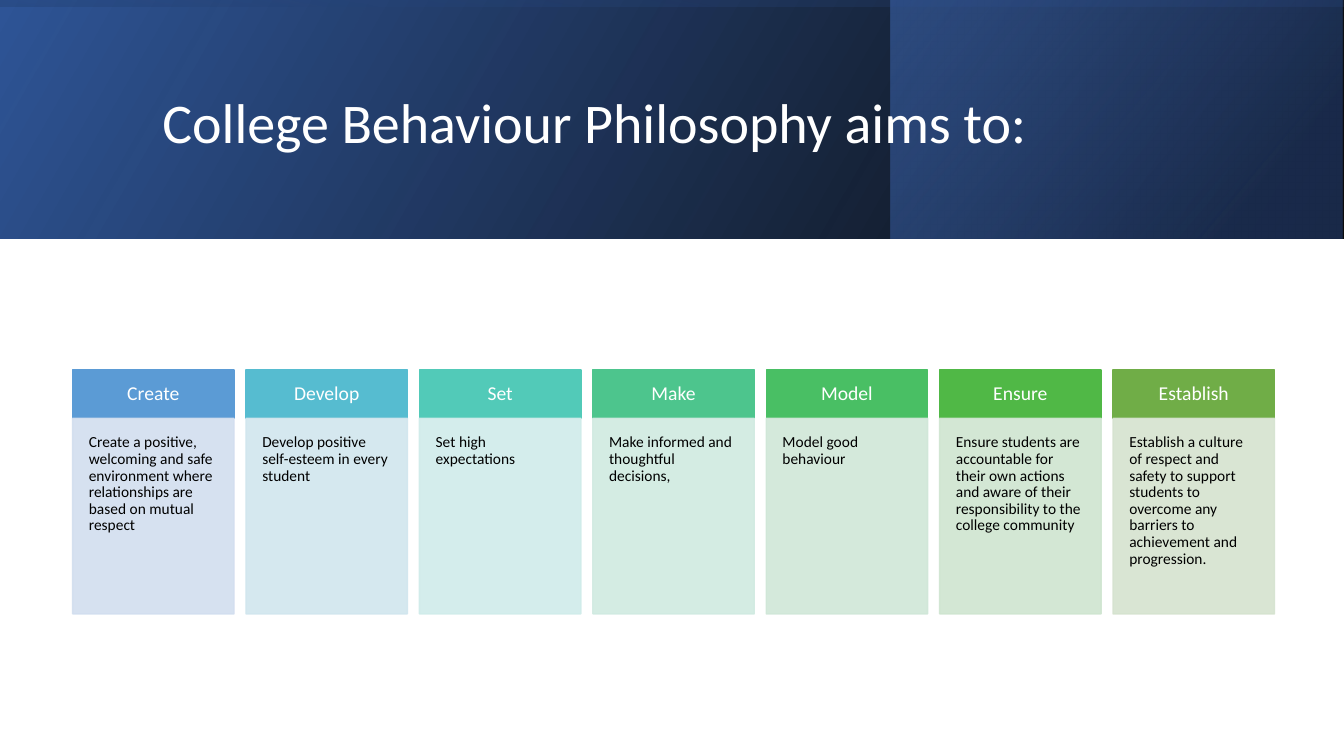
from lxml import etree
from pptx import Presentation
from pptx import util as u
from pptx.dml.color import RGBColor
from pptx.enum import shapes, text
from pptx.oxml import ns

WHITE = RGBColor(0xFF, 0xFF, 0xFF)
BLACK = RGBColor(0x00, 0x00, 0x00)
DEEP_BLUE = RGBColor(0x2F, 0x55, 0x97)
NAVY = RGBColor(0x20, 0x38, 0x64)
BLUE = RGBColor(0x44, 0x72, 0xC4)

PAGE_WIDTH, PAGE_HEIGHT, BAND_HEIGHT = 33.87, 19.05, 6.02

# Heading, text, heading colour, panel colour
AIMS = [
    ("Create", "Create a positive, welcoming and safe environment where "
     "relationships are based on mutual respect ",
     RGBColor(0x5B, 0x9B, 0xD5), RGBColor(0xD2, 0xDE, 0xEF)),
    ("Develop", "Develop positive self-esteem in every student",
     RGBColor(0x56, 0xBC, 0xD0), RGBColor(0xD1, 0xE6, 0xEE)),
    ("Set", "Set high expectations",
     RGBColor(0x52, 0xCA, 0xB8), RGBColor(0xD0, 0xEC, 0xEA)),
    ("Make", "Make informed and thoughtful decisions, ",
     RGBColor(0x4D, 0xC5, 0x8D), RGBColor(0xD0, 0xEA, 0xE1)),
    ("Model", "Model good behaviour",
     RGBColor(0x49, 0xBF, 0x64), RGBColor(0xD0, 0xE7, 0xD8)),
    ("Ensure", "Ensure students are accountable for their own actions "
     "and aware of their responsibility to the college community",
     RGBColor(0x50, 0xB8, 0x46), RGBColor(0xCF, 0xE5, 0xD0)),
    ("Establish", "Establish a culture of respect and safety to support students "
     "to overcome any barriers to achievement and progression. ",
     RGBColor(0x70, 0xAD, 0x47), RGBColor(0xD5, 0xE3, 0xCF)),
]


def write(frame, words, *, size, color, font="Calibri", align=text.PP_ALIGN.LEFT,
          anchor=text.MSO_ANCHOR.TOP, inset=None):
    """Fill a text frame with one formatted paragraph."""
    frame.word_wrap = True
    frame.auto_size = text.MSO_AUTO_SIZE.NONE
    frame.vertical_anchor = anchor
    if inset is not None:
        frame.margin_left = frame.margin_right = u.Cm(inset)
        frame.margin_top = frame.margin_bottom = u.Cm(inset)
    para = frame.paragraphs[0]
    para.alignment = align
    para.line_spacing = 0.9
    span = para.add_run()
    span.text = words
    span.font.name = font
    span.font.size = u.Pt(size)
    span.font.color.rgb = color


def set_alpha(color_node, percent):
    etree.SubElement(color_node, ns.qn("a:alpha"), val=str(percent * 1000))


class Slide:
    def __init__(self, deck):
        self.page = deck.slides.add_slide(deck.slide_layouts[5])

    def box(self, left, top, width, height):
        box = self.page.shapes.add_shape(
            shapes.MSO_SHAPE.RECTANGLE,
            u.Cm(left), u.Cm(top), u.Cm(width), u.Cm(height))
        box.shadow.inherit = False
        return box

    def band(self, left, top, width, height, stops, angle, rotation=0):
        """Mirrored gradient rectangle; stops are (position, colour, opacity)."""
        band = self.box(left, top, width, height)
        band.line.fill.background()
        band.rotation = rotation
        band.fill.background()
        properties = band._element.spPr
        properties.find(ns.qn("a:xfrm")).set("flipH", "1")
        gradient = etree.Element(ns.qn("a:gradFill"), rotWithShape="1")
        stop_list = etree.SubElement(gradient, ns.qn("a:gsLst"))
        for position, color, opacity in stops:
            stop = etree.SubElement(stop_list, ns.qn("a:gs"), pos=str(position * 1000))
            set_alpha(etree.SubElement(stop, ns.qn("a:srgbClr"), val=str(color)), opacity)
        etree.SubElement(gradient, ns.qn("a:lin"), ang=str(angle * 60000), scaled="0")
        properties.replace(properties.find(ns.qn("a:noFill")), gradient)

    def title(self, words, left, top, width, height):
        title = self.page.shapes.title
        title.left, title.top = u.Cm(left), u.Cm(top)
        title.width, title.height = u.Cm(width), u.Cm(height)
        write(title.text_frame, words, size=40, color=WHITE,
              anchor=text.MSO_ANCHOR.MIDDLE)
        # Bring the title in front of the bands
        self.page.shapes._spTree.append(title._element)

    def panel(self, left, top, width, height, fill, words, opacity=100, **style):
        panel = self.box(left, top, width, height)
        panel.fill.solid()
        panel.fill.fore_color.rgb = fill
        panel.line.color.rgb = fill
        panel.line.width = u.Pt(1)
        if opacity < 100:
            for node in panel._element.spPr.iter(ns.qn("a:srgbClr")):
                set_alpha(node, opacity)
        write(panel.text_frame, words, **style)


def main():
    deck = Presentation()
    deck.slide_width, deck.slide_height = u.Cm(PAGE_WIDTH), u.Cm(PAGE_HEIGHT)
    slide = Slide(deck)

    # Header bands
    slide.band(0, 0, PAGE_WIDTH, BAND_HEIGHT,
               [(0, BLACK, 96), (100, DEEP_BLUE, 100)], 330)
    slide.band(22.45, 0, 11.39, BAND_HEIGHT,
               [(19, NAVY, 68), (100, BLUE, 48)], 320)
    offset = (PAGE_WIDTH - BAND_HEIGHT) / 2
    slide.band(offset, -offset, BAND_HEIGHT, PAGE_WIDTH,
               [(23, DEEP_BLUE, 16), (99, BLACK, 45)], 350, rotation=270)
    slide.title("College Behaviour Philosophy aims to:", 3.84, 0.97, 27, 4.37)

    # Seven columns
    left, pitch, width = 1.83, 4.37, 4.07
    top, heading_height, body_height = 9.32, 1.22, 4.93
    for index, (heading, body, strong, pale) in enumerate(AIMS):
        x = left + index * pitch
        slide.panel(x, top, width, heading_height, strong, heading,
                    size=14, color=WHITE, align=text.PP_ALIGN.CENTER,
                    anchor=text.MSO_ANCHOR.MIDDLE, inset=0.33)
        slide.panel(x, top + heading_height, width, body_height, pale, body,
                    opacity=90, size=11, color=BLACK, inset=0.41)

    deck.save("out.pptx")


if __name__ == "__main__":
    main()
